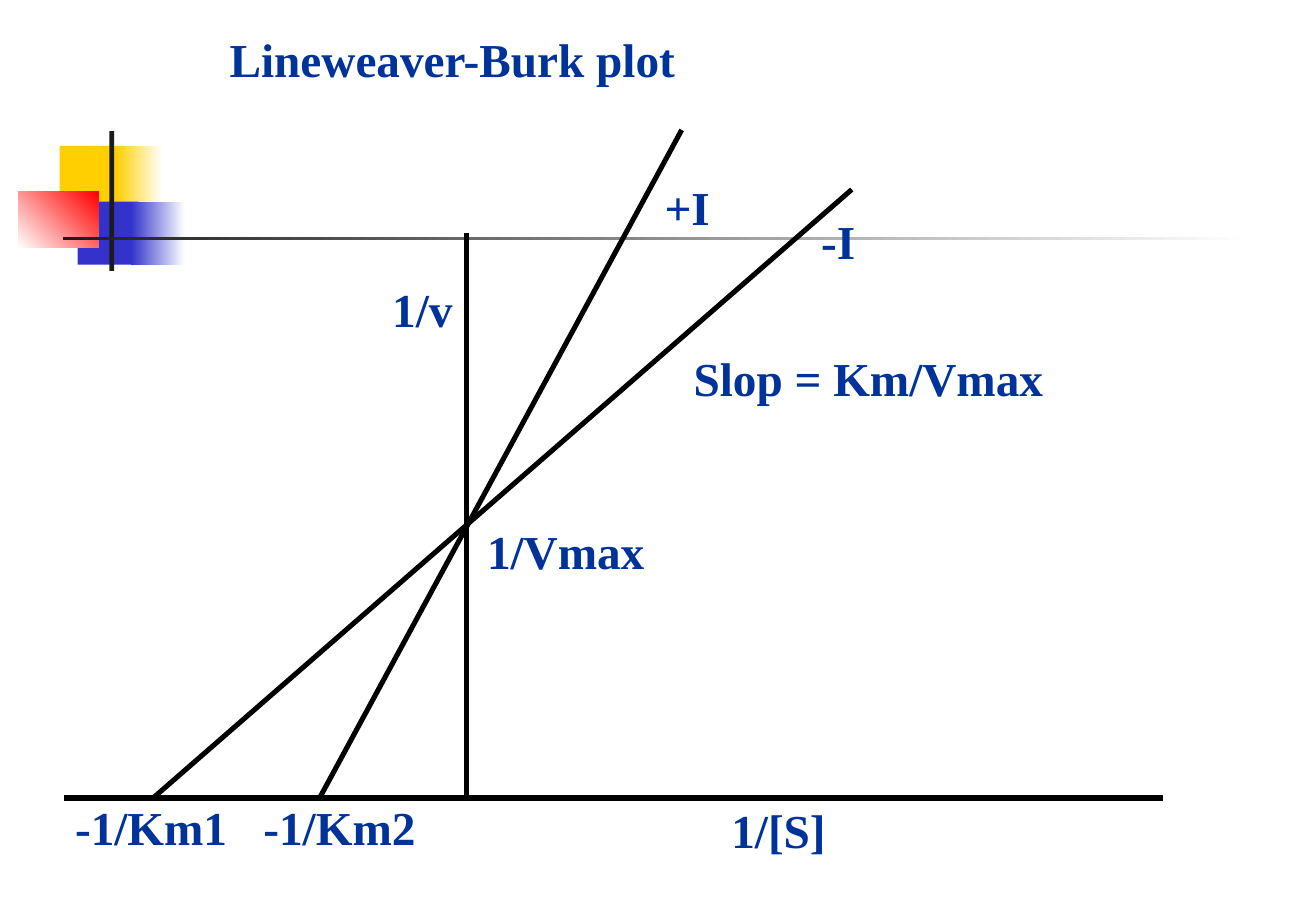
from dataclasses import dataclass

from lxml import etree
from pptx import Presentation
from pptx import util as u
from pptx.dml.color import RGBColor
from pptx.enum import shapes, text
from pptx.oxml.ns import qn

EMU_PER_PX = 9144  # 100 px to the inch


@dataclass(frozen=True)
class Theme:
    ink: str = "003399"
    line: str = "000000"
    white: str = "FFFFFF"
    yellow: str = "FFCF01"
    blue: str = "3333CC"
    red: str = "FF0000"
    rule: str = "1C1C1C"
    font: str = "Times New Roman"
    text_size: int = 28
    line_width: int = 3


@dataclass(frozen=True)
class Block:
    """A rectangle; two colours make a gradient along angle (counter-clockwise)."""
    left: int
    top: int
    width: int
    height: int
    colors: tuple[str, ...]
    angle: int = 0


@dataclass(frozen=True)
class Line:
    start: tuple[int, int]
    end: tuple[int, int]


@dataclass(frozen=True)
class Label:
    wording: str
    left: int
    top: int
    width: int


THEME = Theme()
SLIDE_WIDTH, SLIDE_HEIGHT = 1083, 750
LABEL_HEIGHT = 57
AXIS_X, AXIS_Y = 384, 657

BLOCKS = (
    Block(49, 120, 52, 52, (THEME.yellow,)),
    Block(95, 120, 39, 52, (THEME.yellow, THEME.white)),
    Block(64, 166, 50, 52, (THEME.blue,)),
    Block(108, 166, 44, 52, (THEME.blue, THEME.white)),
    Block(15, 158, 66, 46, (THEME.white, THEME.red), angle=45),
    Block(90, 108, 4, 115, (THEME.rule,)),
    Block(52, 195, 975, 3, (THEME.rule, THEME.white)),
)

LINES = (
    Line((AXIS_X, 192), (AXIS_X, AXIS_Y)),
    Line((957, AXIS_Y), (53, AXIS_Y)),
    Line((126, AXIS_Y), (701, 156)),
    Line((263, AXIS_Y), (561, 107)),
)

TITLE = Label("Lineweaver-Burk plot", 179, 20, 658)
LABELS = (
    Label("1/Vmax", 391, 425, 151),
    Label("-1/Km1", 52, 652, 147),
    Label("-1/Km2", 207, 652, 147),
    Label("Slop = Km/Vmax", 561, 283, 311),
    Label("1/[S]", 592, 655, 99),
    Label("1/v", 313, 226, 70),
    Label("-I", 666, 170, 49),
    Label("+I", 537, 142, 58),
)


def px(length: int) -> u.Emu:
    return u.Emu(length * EMU_PER_PX)


def draw_block(slide, block: Block) -> None:
    shape = slide.shapes.add_shape(
        shapes.MSO_SHAPE.RECTANGLE,
        *map(px, (block.left, block.top, block.width, block.height)))
    shape.shadow.inherit = False
    shape.line.fill.background()
    if len(block.colors) == 1:
        shape.fill.solid()
        shape.fill.fore_color.rgb = RGBColor.from_string(block.colors[0])
        return
    shape.fill.gradient()
    shape.fill.gradient_angle = block.angle
    for stop, color in zip(shape.fill.gradient_stops, block.colors):
        stop.color.rgb = RGBColor.from_string(color)


def draw_line(slide, line: Line) -> None:
    connector = slide.shapes.add_connector(
        shapes.MSO_CONNECTOR.STRAIGHT, *map(px, line.start + line.end))
    connector.line.color.rgb = RGBColor.from_string(THEME.line)
    connector.line.width = u.Pt(THEME.line_width)
    etree.SubElement(connector.element.spPr, qn("a:effectLst"))


def write_label(shape, label: Label, wrap: bool) -> None:
    """Place a text box or placeholder and give it the label's wording."""
    place = {"left": label.left, "top": label.top,
             "width": label.width, "height": LABEL_HEIGHT}
    for name, length in place.items():
        setattr(shape, name, px(length))

    frame = shape.text_frame
    frame_format = {"word_wrap": wrap,
                    "auto_size": text.MSO_AUTO_SIZE.SHAPE_TO_FIT_TEXT,
                    "vertical_anchor": text.MSO_ANCHOR.TOP}
    for name, value in frame_format.items():
        setattr(frame, name, value)

    paragraph = frame.paragraphs[0]
    paragraph.alignment = text.PP_ALIGN.LEFT
    run = paragraph.add_run()
    run.text = label.wording
    font_format = {"name": THEME.font, "size": u.Pt(THEME.text_size), "bold": True}
    for name, value in font_format.items():
        setattr(run.font, name, value)
    run.font.color.rgb = RGBColor.from_string(THEME.ink)


def main() -> None:
    presentation = Presentation()
    presentation.slide_width = px(SLIDE_WIDTH)
    presentation.slide_height = px(SLIDE_HEIGHT)
    title_only = presentation.slide_layouts.get_by_name("Title Only")
    slide = presentation.slides.add_slide(title_only)

    for block in BLOCKS:
        draw_block(slide, block)
    write_label(slide.shapes.title, TITLE, wrap=True)
    for line in LINES:
        draw_line(slide, line)
    for label in LABELS:
        write_label(slide.shapes.add_textbox(0, 0, 0, 0), label, wrap=False)

    presentation.save("out.pptx")


if __name__ == "__main__":
    main()
